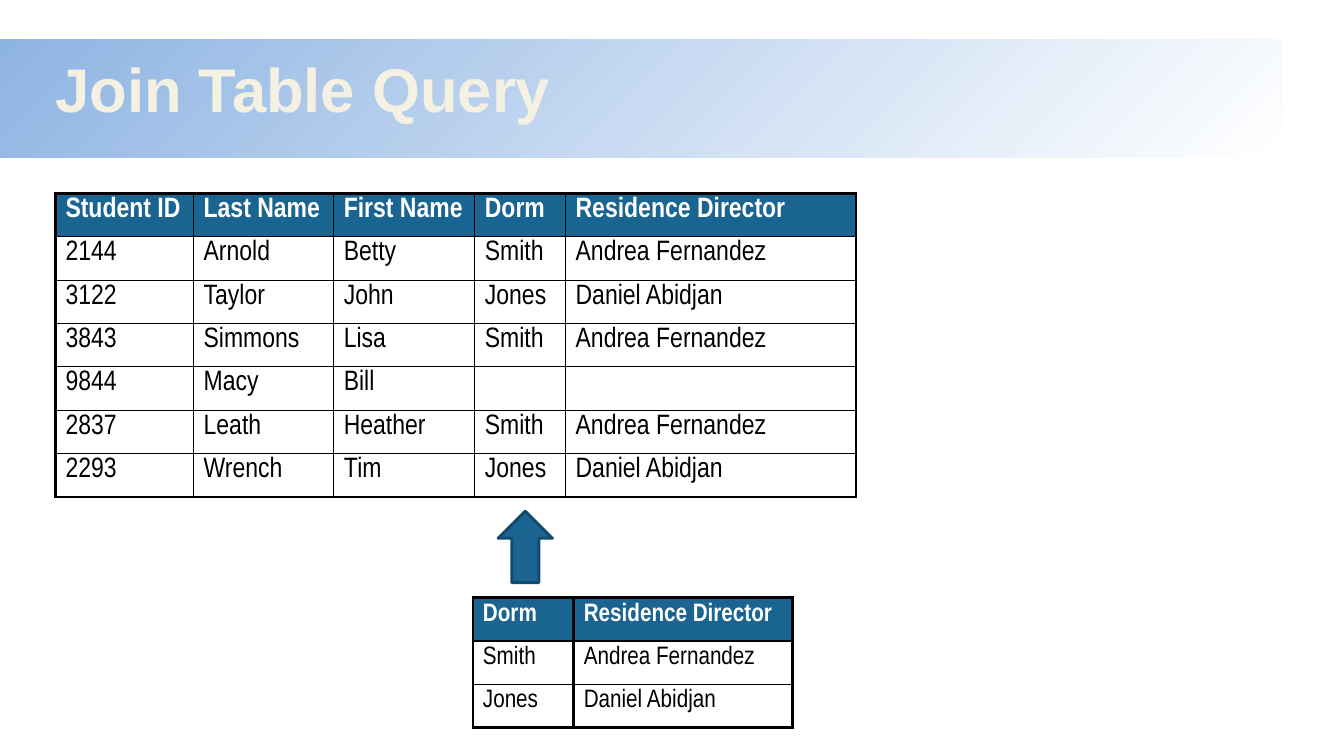
from dataclasses import dataclass

from lxml.etree import SubElement
from pptx import Presentation
from pptx.dml.color import RGBColor
from pptx.enum.shapes import MSO_SHAPE
from pptx.enum.text import MSO_ANCHOR
from pptx.oxml import parse_xml
from pptx.oxml.ns import nsdecls, qn
from pptx.util import Emu, Pt

PX = 9144  # 100 px to the inch
BLUE, BLACK, WHITE = "196491", "000000", "FFFFFF"
ROW_H = 43
THICK, THIN = 2.25, 1


@dataclass
class TableSpec:
    left: int
    top: int
    cols: list[int]
    rows: list[list[str]]
    size: int
    line_spacing: float
    inner_v: float  # width in points of the lines between columns


STUDENTS = TableSpec(55, 192, [137, 139, 140, 90, 288], [
    ["Student ID", "Last Name", "First Name", "Dorm", "Residence Director"],
    ["2144", "Arnold", "Betty", "Smith", "Andrea Fernandez"],
    ["3122", "Taylor", "John", "Jones", "Daniel Abidjan"],
    ["3843", "Simmons", "Lisa", "Smith", "Andrea Fernandez"],
    ["9844", "Macy", "Bill", "", ""],
    ["2837", "Leath", "Heather", "Smith", "Andrea Fernandez"],
    ["2293", "Wrench", "Tim", "Jones", "Daniel Abidjan"],
], 20, 0.9, THIN)

DORMS = TableSpec(469, 593, [100, 217], [
    ["Dorm", "Residence Director"],
    ["Smith", "Andrea Fernandez"],
    ["Jones", "Daniel Abidjan"],
], 18, 1.0, THICK)


def px(n: int) -> Emu:
    return Emu(n * PX)


def rgb(color: str) -> RGBColor:
    return RGBColor.from_string(color)


def set_attrs(obj, values: dict) -> None:
    for name, value in values.items():
        setattr(obj, name, value)


def add_text(p, text: str, color: str, line_spacing: float, **font):
    p.line_spacing = line_spacing
    r = p.add_run()
    r.text = text
    set_attrs(r.font, font)
    r.font.color.rgb = rgb(color)
    return r


def add_shape(slide, kind, left: int, top: int, width: int, height: int):
    sp = slide.shapes.add_shape(kind, px(left), px(top), px(width), px(height))
    sp.shadow.inherit = False
    return sp


def set_borders(cell, widths: dict[str, float]) -> None:
    tc_pr = cell._tc.get_or_add_tcPr()
    for side, width in widths.items():
        ln = SubElement(tc_pr, qn(f"a:ln{side}"), w=str(Pt(width)))
        SubElement(SubElement(ln, qn("a:solidFill")), qn("a:srgbClr"), val=BLACK)


def add_table(slide, spec: TableSpec) -> None:
    n_rows, n_cols = len(spec.rows), len(spec.cols)
    table = slide.shapes.add_table(
        n_rows, n_cols, px(spec.left), px(spec.top),
        px(sum(spec.cols)), px(n_rows * ROW_H)).table
    table.horz_banding = False
    for col, width in zip(table.columns, spec.cols):
        col.width = px(width)
    for i, texts in enumerate(spec.rows):
        table.rows[i].height = px(ROW_H)
        header = i == 0
        for j, text in enumerate(texts):
            cell = table.cell(i, j)
            set_attrs(cell, {"margin_top": px(5), "margin_bottom": px(5)})
            set_borders(cell, {
                "L": THICK if j == 0 else spec.inner_v,
                "R": THICK if j == n_cols - 1 else spec.inner_v,
                "T": THICK if header else THIN,
                "B": THICK if i == n_rows - 1 else THIN,
            })
            cell.fill.solid()
            cell.fill.fore_color.rgb = rgb(BLUE if header else WHITE)
            if text:
                add_text(cell.text_frame.paragraphs[0], text,
                         WHITE if header else BLACK, spec.line_spacing,
                         name="Arial Narrow", size=Pt(spec.size), bold=header)


def add_band(slide) -> None:
    band = add_shape(slide, MSO_SHAPE.RECTANGLE, 0, 39, 1271, 117)
    band.line.fill.background()
    band.fill.gradient()
    band.fill.gradient_angle = 315
    for stop, color, position in zip(band.fill.gradient_stops, ("8EB4E3", WHITE), (0, 1)):
        stop.color.rgb = rgb(color)
        stop.position = position


def add_title(slide) -> None:
    tf = slide.shapes.add_textbox(px(55), px(56), px(1200), px(71)).text_frame
    set_attrs(tf, {"word_wrap": True, "vertical_anchor": MSO_ANCHOR.MIDDLE,
                   "margin_left": 0, "margin_right": 0,
                   "margin_top": 0, "margin_bottom": 0})
    r = add_text(tf.paragraphs[0], "Join Table Query", "F4F1E3", 0.9,
                 name="Arial", size=Pt(44), bold=True)
    outline = parse_xml(f'<a:ln {nsdecls("a")} w="{Pt(1)}"><a:solidFill>'
                        '<a:srgbClr val="054697"/></a:solidFill></a:ln>')
    r.font._element.insert(0, outline)


def add_arrow(slide) -> None:
    arrow = add_shape(slide, MSO_SHAPE.UP_ARROW, 494, 507, 54, 71)
    arrow.fill.solid()
    arrow.fill.fore_color.rgb = rgb(BLUE)
    arrow.line.color.rgb = rgb("124A6B")
    arrow.line.width = Pt(2)


def main() -> None:
    prs = Presentation()
    set_attrs(prs, {"slide_width": px(1333), "slide_height": px(750)})
    slide = prs.slides.add_slide(prs.slide_layouts[6])
    add_band(slide)
    add_title(slide)
    for spec in (STUDENTS, DORMS):
        add_table(slide, spec)
    add_arrow(slide)
    prs.save("out.pptx")


if __name__ == "__main__":
    main()
